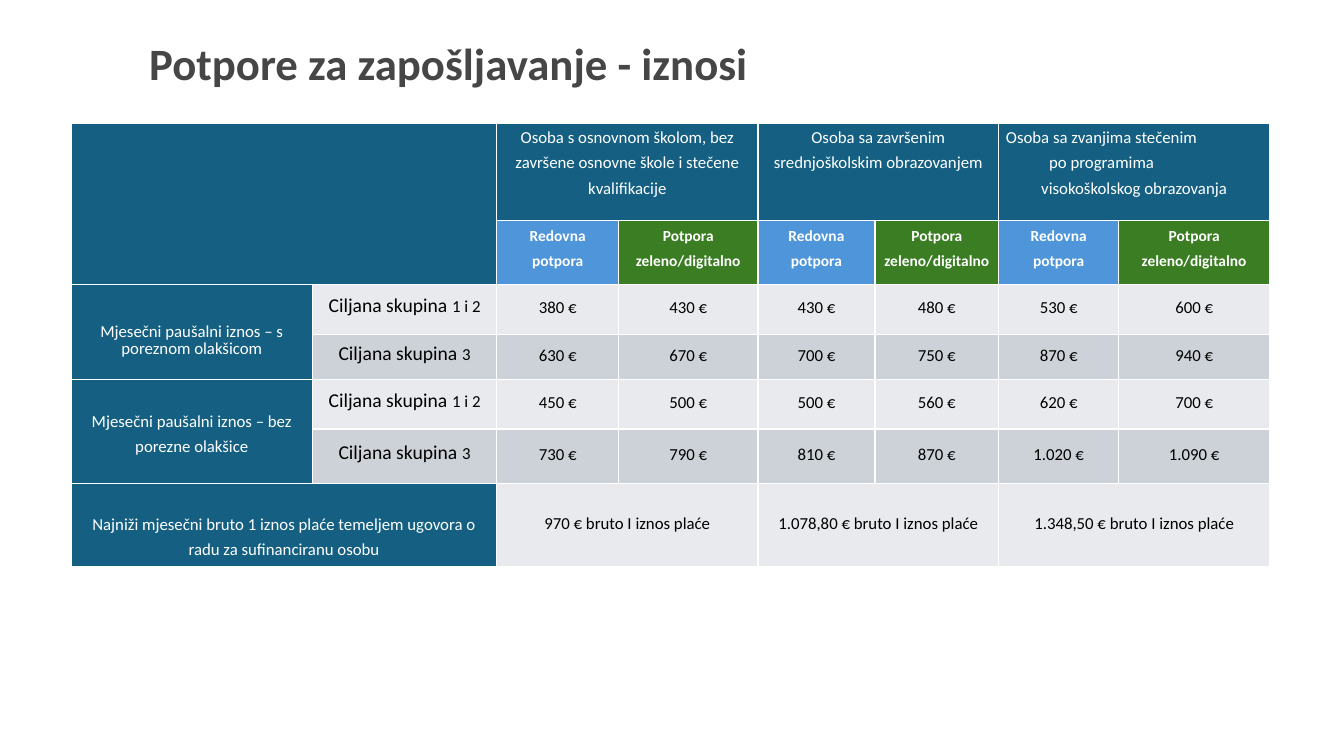
from dataclasses import dataclass

from lxml import etree
from pptx import Presentation
from pptx import util as u
from pptx.dml import color as col
from pptx.enum import text as t
from pptx.oxml import ns


@dataclass(frozen=True)
class Theme:
    font: str = "Calibri"
    title: str = "464646"
    head: str = "156082"
    blue: str = "4E95D9"
    green: str = "3B7D23"
    light: str = "E8EAED"
    dark: str = "CCD2D8"
    white: str = "FFFFFF"
    black: str = "000000"
    big: int = 32
    group: int = 14
    body: int = 12
    small: int = 11


THEME = Theme()
WIDTHS = [6.07, 4.65, 3.07, 3.51, 2.95, 3.12, 3.02, 3.81]
HEIGHTS = [2.46, 1.6, 1.27, 1.14, 1.24, 1.37, 2.11]
LEVELS = [
    "Osoba s osnovnom školom, bez završene osnovne škole i stečene kvalifikacije",
    "Osoba sa završenim srednjoškolskim obrazovanjem",
]
DEGREE = [
    ("Osoba sa zvanjima stečenim", 0),
    ("po programima", 1.09),
    ("visokoškolskog obrazovanja", 0.89),
]
KINDS = [("Redovna potpora", THEME.blue), ("Potpora zeleno/digitalno", THEME.green)]
SUMS = [
    ("1 i 2", ["380", "430", "430", "480", "530", "600"]),
    ("3", ["630", "670", "700", "750", "870", "940"]),
    ("1 i 2", ["450", "500", "500", "560", "620", "700"]),
    ("3", ["730", "790", "810", "870", "1.020", "1.090"]),
]
WAGES = ["970", "1.078,80", "1.348,50"]


def style(para, size, color, bold=False, lead=12, align=t.PP_ALIGN.CENTER):
    para.alignment = align
    para.line_spacing = u.Pt(lead) if lead > 2 else lead
    para.font.name = THEME.font
    para.font.size = u.Pt(size)
    para.font.bold = bold
    para.font.color.rgb = col.RGBColor.from_string(color)


def border(cell):
    props = cell._tc.get_or_add_tcPr()
    for side in ("lnL", "lnR", "lnT", "lnB"):
        line = etree.SubElement(props, ns.qn("a:" + side), w=str(u.Pt(1)))
        fill = etree.SubElement(line, ns.qn("a:solidFill"))
        etree.SubElement(fill, ns.qn("a:srgbClr"), val=THEME.white)


def paint(cell, fill, anchor=t.MSO_ANCHOR.MIDDLE, top=0):
    cell.fill.solid()
    cell.fill.fore_color.rgb = col.RGBColor.from_string(fill)
    cell.vertical_anchor = anchor
    cell.margin_left = cell.margin_right = u.Cm(0.18)
    cell.margin_top, cell.margin_bottom = u.Cm(top), 0


def label(cell, words, fill, color=THEME.white, size=THEME.body, bold=False,
          lead=18, **place):
    paint(cell, fill, **place)
    para = cell.text_frame.paragraphs[0]
    para.add_run().text = words
    style(para, size, color, bold, lead)


def group(cell, code, fill):
    label(cell, "Ciljana skupina ", fill, THEME.black, THEME.group, lead=12)
    run = cell.text_frame.paragraphs[0].add_run()
    run.text = code
    run.font.size = u.Pt(THEME.body)


def degree(cell):
    paint(cell, THEME.head, t.MSO_ANCHOR.TOP)
    frame = cell.text_frame
    for i, (words, indent) in enumerate(DEGREE):
        para = frame.add_paragraph() if i else frame.paragraphs[0]
        para.text = words
        para._p.get_or_add_pPr().set("marL", str(u.Cm(indent)))
        style(para, THEME.body, THEME.white, lead=18, align=t.PP_ALIGN.LEFT)


def title(slide, words):
    box = slide.shapes.add_textbox(u.Cm(3.51), u.Cm(1.27), u.Cm(24.94), u.Cm(1.14))
    frame = box.text_frame
    frame.word_wrap = True
    frame.vertical_anchor = t.MSO_ANCHOR.BOTTOM
    para = frame.paragraphs[0]
    para.text = words
    style(para, THEME.big, THEME.title, True, 0.9, t.PP_ALIGN.LEFT)


def grid(slide):
    table = slide.shapes.add_table(
        len(HEIGHTS), len(WIDTHS), u.Cm(1.8), u.Cm(3.1),
        u.Cm(sum(WIDTHS)), u.Cm(sum(HEIGHTS))).table
    table.first_row = table.horz_banding = False
    for part, width in zip(table.columns, WIDTHS):
        part.width = u.Cm(width)
    for part, height in zip(table.rows, HEIGHTS):
        part.height = u.Cm(height)
    for cell in table.iter_cells():
        border(cell)
    spans = [(0, 0, 1, 1), (2, 0, 3, 0), (4, 0, 5, 0), (6, 0, 6, 1)]
    spans += [(r, c, r, c + 1) for r in (0, 6) for c in (2, 4, 6)]
    for top, left, end, right in spans:
        table.cell(top, left).merge(table.cell(end, right))
    return table


def heads(table):
    paint(table.cell(0, 0), THEME.head)
    for i, words in enumerate(LEVELS):
        label(table.cell(0, 2 + 2 * i), words, THEME.head, anchor=t.MSO_ANCHOR.TOP)
    degree(table.cell(0, 6))
    for c in range(2, 8):
        words, fill = KINDS[c % 2]
        label(table.cell(1, c), words, fill, size=THEME.small, bold=True,
              anchor=t.MSO_ANCHOR.TOP)


def sums(table):
    label(table.cell(2, 0), "Mjesečni paušalni iznos – s poreznom olakšicom",
          THEME.head, lead=12, top=0.5)
    label(table.cell(4, 0), "Mjesečni paušalni iznos – bez porezne olakšice",
          THEME.head)
    for r, (code, row) in enumerate(SUMS, 2):
        fill = THEME.dark if r % 2 else THEME.light
        group(table.cell(r, 1), code, fill)
        for c, value in enumerate(row, 2):
            label(table.cell(r, c), f"{value} €", fill, THEME.black, lead=12)


def wages(table):
    label(table.cell(6, 0), "Najniži mjesečni bruto 1 iznos plaće temeljem ugovora o "
          "radu za sufinanciranu osobu", THEME.head, top=0.5)
    for i, value in enumerate(WAGES):
        label(table.cell(6, 2 + 2 * i), f"{value} € bruto I iznos plaće",
              THEME.light, THEME.black, lead=12)


def main():
    deck = Presentation()
    deck.slide_width, deck.slide_height = u.Cm(33.87), u.Cm(19.05)
    slide = deck.slides.add_slide(deck.slide_layouts[6])
    title(slide, "Potpore za zapošljavanje - iznosi")
    table = grid(slide)
    heads(table)
    sums(table)
    wages(table)
    deck.save("out.pptx")


if __name__ == "__main__":
    main()
